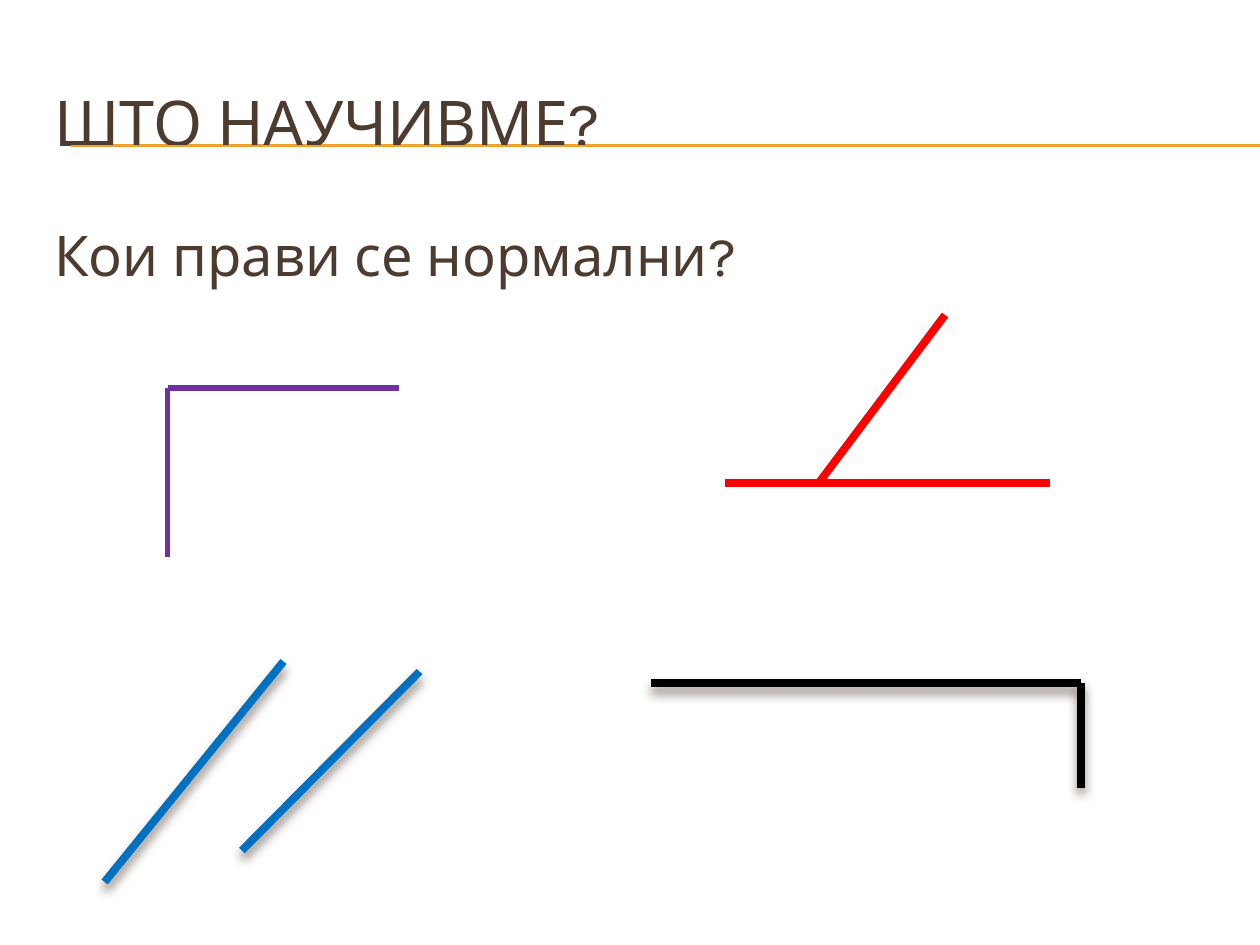
from lxml import etree
from pptx import Presentation
from pptx.dml.color import RGBColor
from pptx.enum.shapes import MSO_CONNECTOR
from pptx.enum.text import MSO_ANCHOR, PP_ALIGN
from pptx.oxml.ns import qn
from pptx.util import Inches, Pt

STRAIGHT = MSO_CONNECTOR.STRAIGHT
MIDDLE, TOP = MSO_ANCHOR.MIDDLE, MSO_ANCHOR.TOP
LEFT = PP_ALIGN.LEFT
FONT = "Karla"
COLORS = {
    "text": "4E3B30",
    "rule": "F0A22E",
    "red": "FF0000",
    "blue": "0070C0",
    "black": "000000",
    "purple": "7030A0",
}

prs = Presentation()
prs.slide_width, prs.slide_height = Inches(10), Inches(7.5)
s = prs.slides.add_slide(prs.slide_layouts[1])


def add_line(start, end, color, width, shadow=False):
    ends = [Inches(v) for v in (*start, *end)]
    sp = s.shapes.add_connector(STRAIGHT, *ends)
    sp.line.color.rgb = RGBColor.from_string(COLORS[color])
    sp.line.width = Pt(width)
    effects = etree.SubElement(sp._element.spPr, qn("a:effectLst"))
    if shadow:
        outer = etree.SubElement(effects, qn("a:outerShdw"), blurRad=str(Pt(6)),
                                 dist=str(Pt(4)), dir=str(90 * 60000), rotWithShape="0")
        tint = etree.SubElement(outer, qn("a:srgbClr"), val=COLORS["text"])
        etree.SubElement(tint, qn("a:alpha"), val="60000")


def set_text(sp, text, size, box, anchor):
    """Place a placeholder and fill it with one formatted paragraph."""
    sp.left, sp.top, sp.width, sp.height = [Inches(v) for v in box]
    tf = sp.text_frame
    tf.word_wrap = True
    tf.vertical_anchor = anchor
    p = tf.paragraphs[0]
    p.alignment = LEFT
    r = p.add_run()
    r.text = text
    r.font.name = FONT
    r.font.size = Pt(size)
    r.font.color.rgb = RGBColor.from_string(COLORS["text"])
    return p


# Double rule behind the title
for y in (1.15, 1.16):
    add_line((0.56, y), (10, y), "rule", 0.75)

title, body = s.placeholders
set_text(title, "ШТО НАУЧИВМЕ?", 36, (0.33, 0.5, 9.5, 0.92), MIDDLE)
p = set_text(body, "Кои прави се нормални?", 32, (0.33, 1.7, 9.5, 4.95), TOP)
pPr = p._p.get_or_add_pPr()
pPr.set("marL", str(Inches(0.38)))
pPr.set("indent", str(-Inches(0.38)))
etree.SubElement(pPr, qn("a:buNone"))

# Pairs of lines: start, end, colour, width, shadow
pairs = [
    ((7.5, 2.5), (6.5, 3.83), "red", 4.5, False),
    ((5.75, 3.83), (8.33, 3.83), "red", 4.5, False),
    ((2.25, 5.25), (0.83, 7), "blue", 4.5, True),
    ((3.33, 5.33), (1.92, 6.75), "blue", 4.5, True),
    ((5.17, 5.42), (8.58, 5.42), "black", 4.5, True),
    ((8.58, 6.25), (8.58, 5.42), "black", 4.5, True),
    ((1.33, 3.08), (3.17, 3.08), "purple", 3, False),
    ((1.33, 4.42), (1.33, 3.08), "purple", 3, False),
]
for pair in pairs:
    add_line(*pair)

# The rule lies behind the title and body text
for sp in (body, title):
    tree = s.shapes._spTree
    tree.remove(sp._element)
    tree.insert(4, sp._element)

prs.save("out.pptx")
